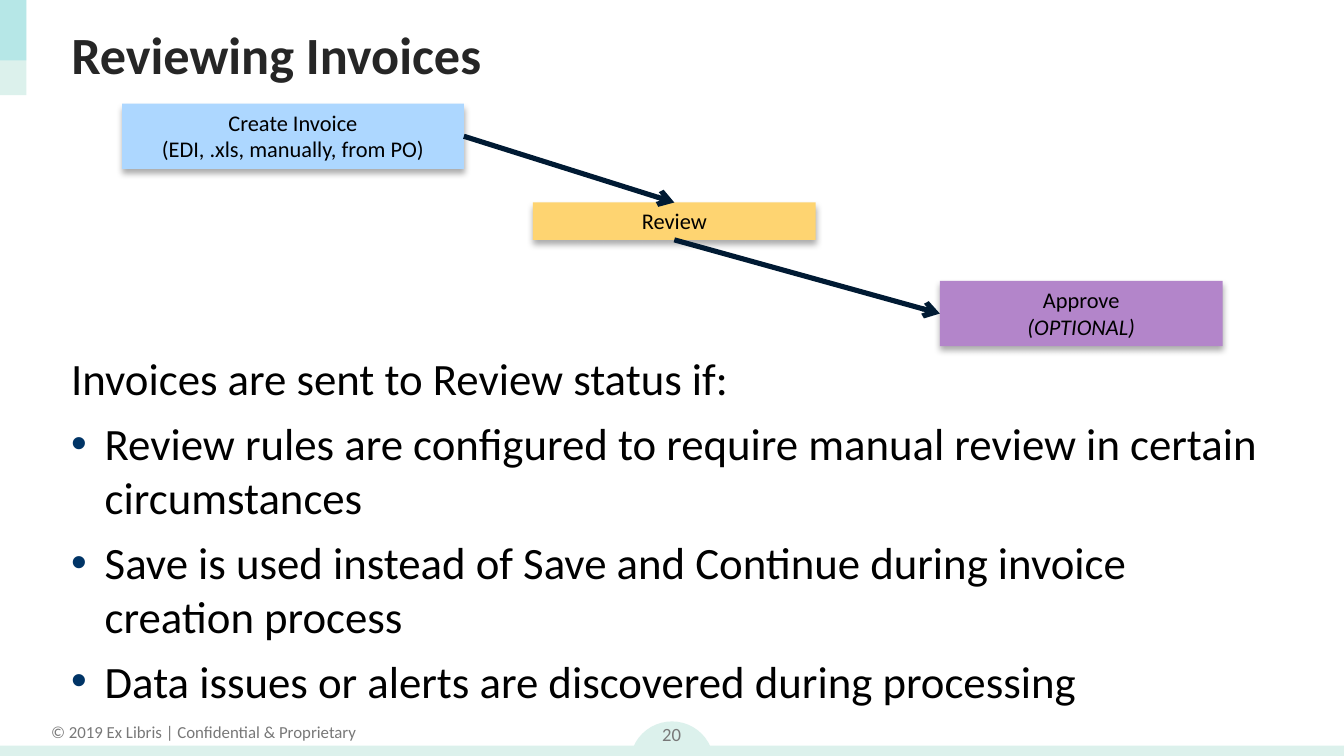
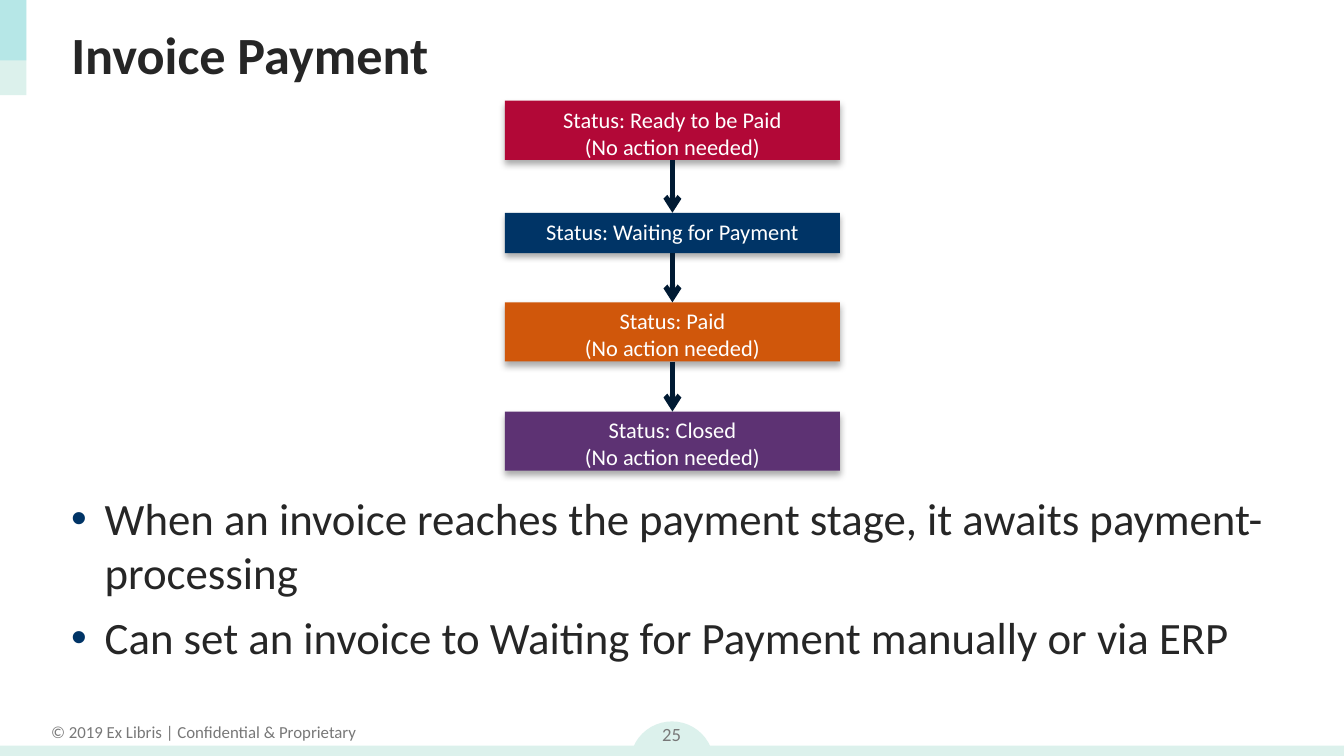
from dataclasses import dataclass
from itertools import pairwise

from lxml.etree import SubElement
from pptx import Presentation
from pptx.dml.color import RGBColor
from pptx.enum.shapes import MSO_CONNECTOR, MSO_SHAPE
from pptx.enum.text import MSO_ANCHOR, PP_ALIGN
from pptx.oxml.ns import qn
from pptx.shapes.autoshape import Shape
from pptx.slide import Slide
from pptx.util import Pt

FONT = "Calibri"
BLACK = RGBColor(0x00, 0x00, 0x00)
WHITE = RGBColor(0xFF, 0xFF, 0xFF)
CHARCOAL = RGBColor(0x26, 0x26, 0x26)
GRAY = RGBColor(0x78, 0x78, 0x78)
MINT = RGBColor(0xDC, 0xF1, 0xEC)
TEAL = RGBColor(0x50, 0xCF, 0xDA)
NAVY = RGBColor(0x00, 0x34, 0x66)
ARROW_NAVY = RGBColor(0x00, 0x1A, 0x33)
SKY = RGBColor(0xAD, 0xD7, 0xFF)
YELLOW = RGBColor(0xFE, 0xD4, 0x71)
LILAC = RGBColor(0xB3, 0x85, 0xCA)
CRIMSON = RGBColor(0xB2, 0x08, 0x37)
ORANGE = RGBColor(0xD0, 0x57, 0x0B)
PURPLE = RGBColor(0x5D, 0x32, 0x73)

WIDTH, HEIGHT = 720, 405
MARGIN, CONTENT_WIDTH = 31, 663
STATUS_LEFT, STATUS_WIDTH = 270.5, 179.5
TOP, LEFT, BOTTOM, RIGHT = range(4)
FOOTER = "© 2019 Ex Libris | Confidential & Proprietary"
NO_ACTION = "(No action needed)"


@dataclass(frozen=True)
class Area:
    left: float
    top: float
    width: float
    height: float

    def lengths(self) -> tuple[Pt, Pt, Pt, Pt]:
        return Pt(self.left), Pt(self.top), Pt(self.width), Pt(self.height)


@dataclass(frozen=True)
class Step:
    lines: tuple[str, ...]
    area: Area
    fill: RGBColor
    color: RGBColor
    italic_lines: tuple[str, ...] = ()


@dataclass(frozen=True)
class Body:
    area: Area
    color: RGBColor
    bullets: tuple[str, ...]
    lead: str = ""


@dataclass(frozen=True)
class FlowPage:
    title: str
    number: int
    steps: tuple[Step, ...]
    joints: tuple[tuple[int, int], ...]
    body: Body


def status(top: float, height: float, fill: RGBColor, *lines: str) -> Step:
    return Step(lines, Area(STATUS_LEFT, top, STATUS_WIDTH, height), fill, WHITE)


PAGES = (
    FlowPage(
        "Reviewing Invoices",
        20,
        (
            Step(("Create Invoice", "(EDI, .xls, manually, from PO)"),
                 Area(65.5, 55.5, 183, 35), SKY, BLACK),
            Step(("Review",), Area(285.5, 108.5, 151.5, 20), YELLOW, BLACK),
            Step(("Approve", "(OPTIONAL)"), Area(503.5, 150.5, 151.5, 35), LILAC, BLACK,
                 ("(OPTIONAL)",)),
        ),
        ((RIGHT, TOP), (BOTTOM, LEFT)),
        Body(
            Area(MARGIN, 184.5, CONTENT_WIDTH, 200),
            BLACK,
            (
                "Review rules are configured to require manual review in certain circumstances",
                "Save is used instead of Save and Continue during invoice creation process",
                "Data issues or alerts are discovered during processing",
            ),
            "Invoices are sent to Review status if:",
        ),
    ),
    FlowPage(
        "Invoice Payment",
        25,
        (
            status(54, 31.7, CRIMSON, "Status: Ready to be Paid", NO_ACTION),
            status(114, 21.6, NAVY, "Status: Waiting for Payment"),
            status(162, 31.7, ORANGE, "Status: Paid", NO_ACTION),
            status(220.5, 31.7, PURPLE, "Status: Closed", NO_ACTION),
        ),
        ((BOTTOM, TOP),) * 3,
        Body(
            Area(MARGIN, 259.5, CONTENT_WIDTH, 115),
            CHARCOAL,
            (
                "When an invoice reaches the payment stage, it awaits payment-processing",
                "Can set an invoice to Waiting for Payment manually or via ERP",
            ),
        ),
    ),
)


def style(paragraph, size: float, color: RGBColor, align: PP_ALIGN = PP_ALIGN.LEFT) -> None:
    paragraph.alignment = align
    paragraph.font.name = FONT
    paragraph.font.size = Pt(size)
    paragraph.font.color.rgb = color


def add_block(page: Slide, kind: MSO_SHAPE, area: Area, fill: RGBColor) -> Shape:
    box = page.shapes.add_shape(kind, *area.lengths())
    box.shadow.inherit = False
    box.fill.solid()
    box.fill.fore_color.rgb = fill
    box.line.fill.background()
    return box


def add_label(page: Slide, text: str, area: Area, size: float, wrap: bool) -> None:
    frame = page.shapes.add_textbox(*area.lengths()).text_frame
    frame.word_wrap = wrap
    frame.vertical_anchor = MSO_ANCHOR.MIDDLE
    frame.text = text
    style(frame.paragraphs[0], size, GRAY, PP_ALIGN.CENTER)


def add_frame(page: Slide, number: int) -> None:
    add_block(page, MSO_SHAPE.OVAL, Area(337.5, 386.5, 45, 45), MINT)
    add_label(page, FOOTER, Area(19.5, 383, 179, 18), 9, False)
    add_block(page, MSO_SHAPE.RECTANGLE, Area(0, 399.5, WIDTH, HEIGHT - 399.5), MINT)
    add_block(page, MSO_SHAPE.RECTANGLE, Area(0, 0, 14.2, 51), MINT)
    accent = add_block(page, MSO_SHAPE.RECTANGLE, Area(0, 0, 14.2, 32.4), TEAL)
    color = accent.fill._xPr.find(qn("a:solidFill")).find(qn("a:srgbClr"))
    SubElement(color, qn("a:alpha"), val="27000")
    add_label(page, str(number), Area(338.5, 379, 42.5, 29), 10, True)


def set_title(page: Slide, text: str) -> None:
    title = page.shapes.title
    title.left, title.top, title.width, title.height = Area(
        MARGIN, 6, CONTENT_WIDTH, 45
    ).lengths()
    title.text_frame.text = text
    title.text_frame.vertical_anchor = MSO_ANCHOR.MIDDLE
    paragraph = title.text_frame.paragraphs[0]
    style(paragraph, 28, CHARCOAL)
    paragraph.font.bold = True


def add_shadow(box: Shape) -> None:
    effects = box._element.spPr.find(qn("a:effectLst"))
    shadow = SubElement(
        effects, qn("a:outerShdw"), blurRad=str(Pt(3.5)), dist=str(Pt(2.2)),
        dir="5400000", rotWithShape="0",
    )
    color = SubElement(shadow, qn("a:srgbClr"), val=str(BLACK))
    SubElement(color, qn("a:alpha"), val="32000")


def add_step(page: Slide, step: Step) -> Shape:
    box = add_block(page, MSO_SHAPE.RECTANGLE, step.area, step.fill)
    add_shadow(box)
    frame = box.text_frame
    frame.word_wrap = True
    frame.vertical_anchor = MSO_ANCHOR.TOP
    frame.margin_left = frame.margin_right = Pt(5.4)
    frame.margin_top = frame.margin_bottom = Pt(2.7)
    frame.text = "\n".join(step.lines)
    for paragraph in frame.paragraphs:
        style(paragraph, 12, step.color, PP_ALIGN.CENTER)
        if paragraph.text in step.italic_lines:
            paragraph.font.italic = True
    return box


def add_arrow(page: Slide, start: Shape, end: Shape, joint: tuple[int, int]) -> None:
    arrow = page.shapes.add_connector(MSO_CONNECTOR.STRAIGHT, 0, 0, 0, 0)
    arrow.begin_connect(start, joint[0])
    arrow.end_connect(end, joint[1])
    arrow.line.color.rgb = ARROW_NAVY
    arrow.line.width = Pt(2.75)
    SubElement(arrow.line._ln, qn("a:tailEnd"), type="arrow")
    SubElement(arrow._element.spPr, qn("a:effectLst"))


def add_bullet(paragraph) -> None:
    properties = paragraph._p.get_or_add_pPr()
    properties.set("marL", str(Pt(18)))
    properties.set("indent", str(-Pt(18)))
    color = SubElement(properties, qn("a:buClr"))
    SubElement(color, qn("a:srgbClr"), val=str(NAVY))
    SubElement(properties, qn("a:buFont"), typeface="Arial")
    SubElement(properties, qn("a:buChar"), char="•")


def add_body(page: Slide, body: Body) -> None:
    frame = page.shapes.add_textbox(*body.area.lengths()).text_frame
    frame.word_wrap = True
    lead = (body.lead,) if body.lead else ()
    frame.text = "\n".join(lead + body.bullets)
    for index, paragraph in enumerate(frame.paragraphs):
        if index:
            paragraph.space_before = Pt(6)
        if index >= len(lead):
            add_bullet(paragraph)
        style(paragraph, 24, body.color)


def add_page(deck, content: FlowPage) -> None:
    page = deck.slides.add_slide(deck.slide_layouts.get_by_name("Title Only"))
    add_frame(page, content.number)
    set_title(page, content.title)
    add_body(page, content.body)
    boxes = [add_step(page, step) for step in content.steps]
    for (start, end), joint in zip(pairwise(boxes), content.joints):
        add_arrow(page, start, end, joint)


def main() -> None:
    deck = Presentation()
    deck.slide_width, deck.slide_height = Pt(WIDTH), Pt(HEIGHT)
    for content in PAGES:
        add_page(deck, content)
    deck.save("out.pptx")


if __name__ == "__main__":
    main()
